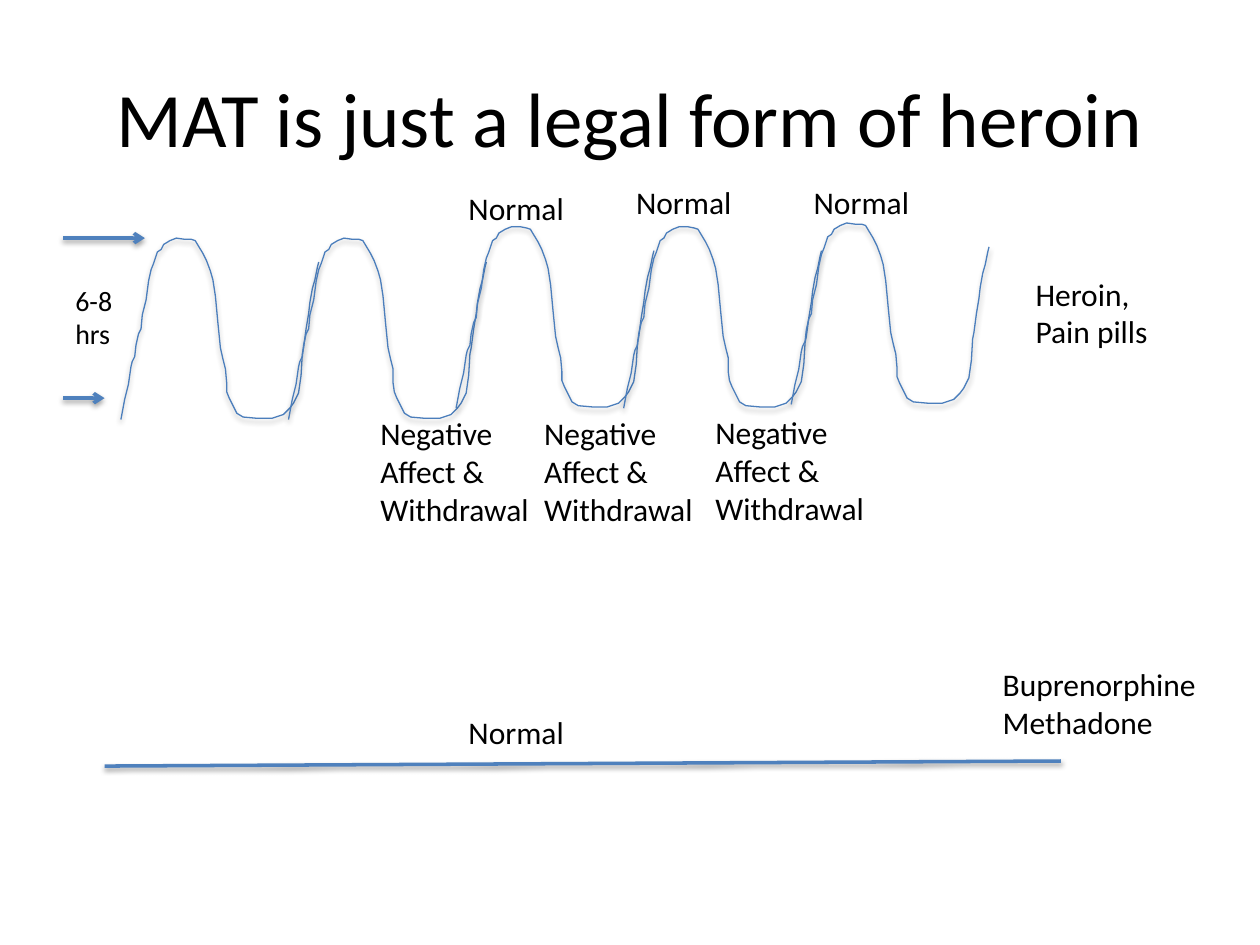
from lxml.etree import SubElement
from pptx import Presentation
from pptx.dml.color import RGBColor as RGB
from pptx.enum.shapes import MSO_CONNECTOR as CONN
from pptx.enum.text import MSO_ANCHOR as ANCHOR, MSO_AUTO_SIZE as AUTO, PP_ALIGN as ALIGN
from pptx.oxml.ns import qn
from pptx.util import Inches, Pt

COLORS = {"text": "000000", "wave": "4B7EBC", "line": "4F81BD", "shadow": "000000"}
FONT = "Calibri"
COLS, ROWS = 10, 7.5
WAVE = [
    (0, 144), (3, 128), (5, 120), (6, 116), (8, 102), (9, 98), (11, 94),
    (12, 85), (14, 76), (16, 72), (17, 61), (20, 49), (22, 34), (24, 25),
    (26, 20), (28, 14), (29, 11), (32, 9), (34, 5), (39, 2), (44, 0),
    (51, 0.5), (56, 1), (59, 2), (62, 7), (65, 12), (68, 18), (71, 26),
    (73, 33), (75, 46), (77, 67), (79, 87), (81, 96), (83, 104), (83.5, 115),
    (84, 122), (86, 127), (89, 133), (92, 139), (97, 142), (108, 143),
    (120, 143), (129, 140), (134, 135), (137, 131), (141, 123), (143, 109),
    (144, 92), (145, 87), (147, 72), (149, 60), (150, 51), (152, 40),
    (154, 33), (156, 23), (157, 19),
]
WAVE_STEP = 1.33
WAVE_TOPS = [0.49, 0.49, 0.4, 0.4, 0.37]
NORMAL = ["Normal"]
NEGATIVE = ["Negative", "Affect &", "Withdrawal"]


def write(tf, lines, size=18, align=ALIGN.LEFT):
    for i, text in enumerate(lines):
        p = tf.paragraphs[0] if i == 0 else tf.add_paragraph()
        p.alignment = align
        r = p.add_run()
        r.text = text
        r.font.name, r.font.size = FONT, Pt(size)
        r.font.color.rgb = RGB.from_string(COLORS["text"])


def add_label(s, x, y, w, h, lines, size=18, wrap=False):
    tf = s.shapes.add_textbox(Inches(x), Inches(y), Inches(w), Inches(h)).text_frame
    tf.word_wrap = wrap
    tf.auto_size = AUTO.SHAPE_TO_FIT_TEXT
    write(tf, lines, size=size)


def style_line(sp, color, width, alpha, dist):
    sp.line.color.rgb = RGB.from_string(COLORS[color])
    sp.line.width = Pt(width)
    spPr = sp._element.spPr
    for old in spPr.findall(qn("a:effectLst")):
        spPr.remove(old)
    shadow = SubElement(SubElement(spPr, qn("a:effectLst")), qn("a:outerShdw"),
                        blurRad=str(Pt(3.1)), dist=str(Pt(dist)),
                        dir="5400000", rotWithShape="0")
    clr = SubElement(shadow, qn("a:srgbClr"), val=COLORS["shadow"])
    SubElement(clr, qn("a:alpha"), val=str(alpha * 1000))


def add_line(s, x1, y1, x2, y2, arrow=False):
    sp = s.shapes.add_connector(CONN.STRAIGHT, *map(Inches, (x1, y1, x2, y2)))
    style_line(sp, "line", 2, 38, 1.6)
    if arrow:
        SubElement(sp.line._get_or_add_ln(), qn("a:tailEnd"), type="arrow")


def add_wave(s, x, y):
    points = [(x * 100 + dx, y * 100 + dy) for dx, dy in WAVE]
    fb = s.shapes.build_freeform(*points[0], scale=Inches(0.01))
    fb.add_line_segments(points[1:], close=False)
    sp = fb.convert_to_shape()
    sp.fill.background()
    style_line(sp, "wave", 0.75, 35, 1.8)


def add_title(s, x, y, w, h):
    sp = s.shapes.title
    sp.left, sp.top, sp.width, sp.height = map(Inches, (x, y, w, h))
    sp.text_frame.vertical_anchor = ANCHOR.MIDDLE
    write(sp.text_frame, ["MAT is just a legal form of heroin"], size=44, align=ALIGN.CENTER)


def add_cycles(s, x, y, w, h):
    for i, top in enumerate(WAVE_TOPS):
        add_wave(s, x + 0.46 + i * WAVE_STEP, y + top)
    for dy, length in [(0.49, 0.65), (1.76, 0.33)]:
        add_line(s, x, y + dy, x + length, y + dy, arrow=True)
    add_label(s, x, y + 0.8, 0.5, 0.64, ["6-8", "hrs"], size=16)
    add_label(s, x + w - 1.11, y + 0.73, 1.11, 0.71, ["Heroin,", "Pain pills"])
    for dx, dy in [(3.12, 0.05), (4.45, 0), (5.86, 0)]:
        add_label(s, x + dx, y + dy, 0.97, 0.4, NORMAL)
    for dx, dy, width, wrap in [(2.42, 0, 1.4, False), (3.72, 0, 1.46, True),
                                (5.08, -0.01, 1.56, True)]:
        add_label(s, x + dx, y + h - 1.01 + dy, width, 1.01, NEGATIVE, wrap=wrap)


def add_steady(s, x, y, w, h):
    add_line(s, x, y + h, x + 7.59, y + h - 0.04)
    add_label(s, x + w - 1.75, y, 1.75, 0.71, ["Buprenorphine", "Methadone"])
    add_label(s, x + 2.79, y + 0.38, 0.97, 0.4, NORMAL)


def main():
    prs = Presentation()
    prs.slide_width, prs.slide_height = Inches(COLS), Inches(ROWS)
    s = prs.slides.add_slide(prs.slide_layouts[5])
    add_title(s, 0.05 * COLS, 0.04 * ROWS, 0.9 * COLS, ROWS / 6)
    add_cycles(s, 0.5, 1.4, 8.73, 2.85)
    add_steady(s, 0.83, 5.23, 8.78, 0.85)
    prs.save("out.pptx")


if __name__ == "__main__":
    main()
